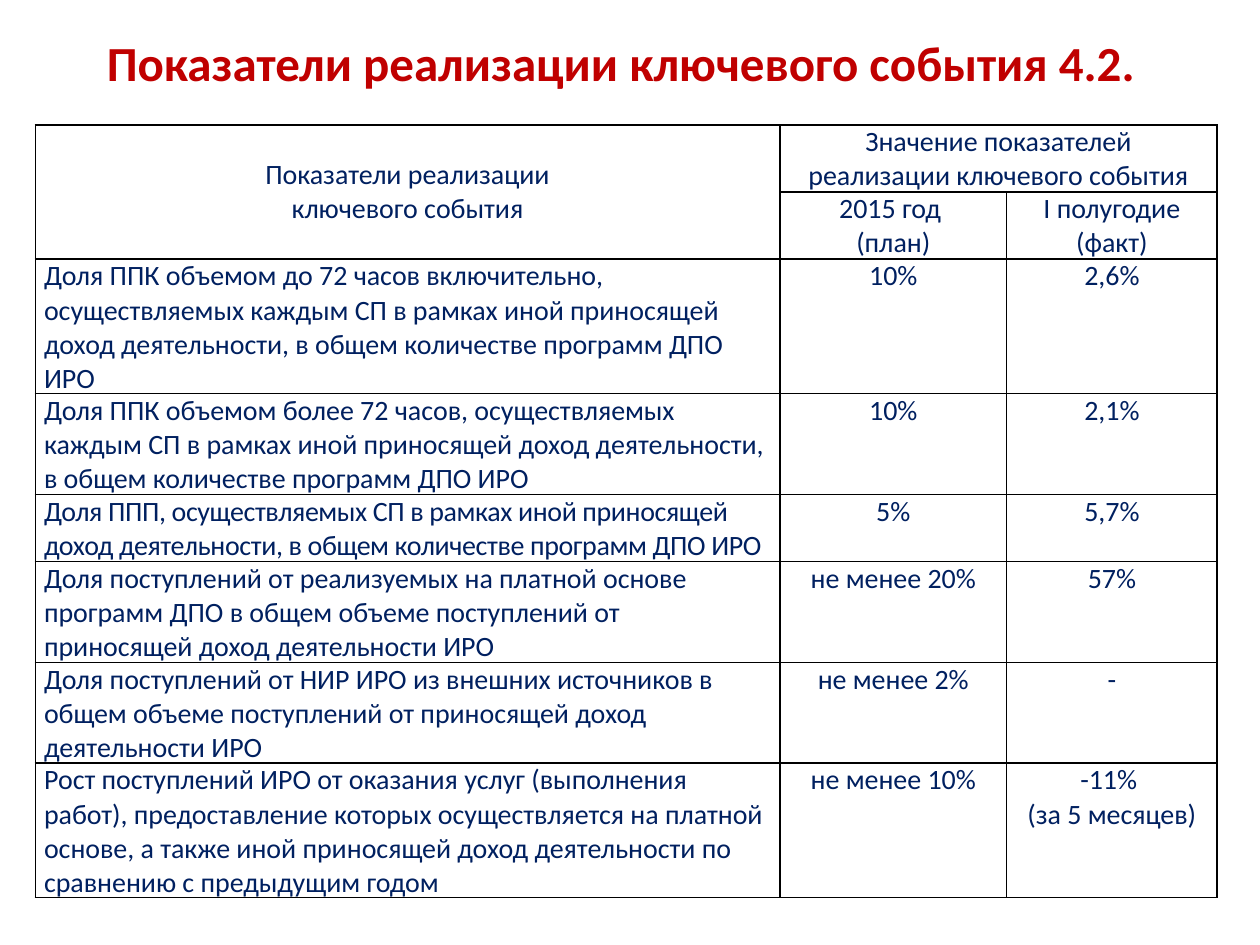
from lxml.etree import SubElement
from pptx import Presentation
from pptx.dml.color import RGBColor
from pptx.enum.text import MSO_ANCHOR as Anchor, MSO_AUTO_SIZE as AutoSize, PP_ALIGN as Align
from pptx.oxml.ns import qn
from pptx.util import Inches, Pt

# Content: "\n" starts a paragraph, "\v" breaks a line
TITLE = "Показатели реализации ключевого события 4.2."
HEADER = [
    ("Показатели реализации\vключевого события",
     "Значение показателей\vреализации ключевого события", ""),
    ("", "2015 год \n(план)", "I полугодие (факт)"),
]
INDICATORS = [
    ("Доля ППК объемом до 72\u00a0часов включительно, осуществляемых каждым СП в рамках "
     "иной приносящей доход деятельности, в общем количестве программ ДПО ИРО",
     "10%", "2,6%"),
    ("Доля ППК объемом более 72 часов, осуществляемых каждым СП в рамках иной "
     "приносящей доход деятельности, в общем количестве программ ДПО ИРО",
     "10%", "2,1%"),
    ("Доля ППП, осуществляемых СП в рамках иной приносящей доход деятельности, "
     "в общем количестве программ ДПО ИРО",
     "5%", "5,7%"),
    ("Доля поступлений от реализуемых на платной основе программ ДПО в общем объеме "
     "поступлений от приносящей доход деятельности ИРО",
     "не менее 20%", "57%"),
    ("Доля поступлений от НИР ИРО из внешних источников в общем объеме поступлений "
     "от приносящей доход деятельности ИРО",
     "не менее 2%", "-"),
    ("Рост поступлений ИРО от оказания услуг (выполнения работ), предоставление которых "
     "осуществляется на платной основе, а также иной приносящей доход деятельности "
     "по сравнению с предыдущим годом",
     "не менее 10%", "-11% \n(за 5 месяцев)"),
]
ROW_LINES = [2, 2, 4, 3, 2, 3, 3, 4]
COLUMN_WIDTHS = [5.91, 1.8, 1.67]
TABLE_HEIGHT = 6.13
CONDENSED_ROW = 4

THEME = {
    "font": "Calibri",
    "title": (28, "C00000", True),
    "body": (16, "002060", False),
    "border": ("000000", 1),
    "condensed": -0.2,
}


def style(paragraph, role, align):
    size, color, bold = THEME[role]
    font = paragraph.font
    font.name, font.size, font.bold = THEME["font"], Pt(size), bold
    font.color.rgb = RGBColor.from_string(color)
    paragraph.alignment = align


def add_borders(cell):
    color, width = THEME["border"]
    properties = cell._tc.get_or_add_tcPr()
    for position, side in enumerate(("a:lnL", "a:lnR", "a:lnT", "a:lnB")):
        line = properties.makeelement(qn(side), {"w": str(Pt(width))})
        fill = SubElement(line, qn("a:solidFill"))
        SubElement(fill, qn("a:srgbClr"), val=color)
        properties.insert(position, line)


def fill_cell(cell, text, align, anchor):
    cell.fill.background()
    cell.margin_left = cell.margin_right = Inches(0.07)
    cell.margin_top = cell.margin_bottom = 0
    cell.vertical_anchor = anchor
    cell.text = text
    for paragraph in cell.text_frame.paragraphs:
        style(paragraph, "body", align)
    add_borders(cell)


deck = Presentation()
deck.slide_width, deck.slide_height = Inches(10), Inches(7.5)
slide = deck.slides.add_slide(deck.slide_layouts[6])

# Title
title = slide.shapes.add_textbox(Inches(0.2), Inches(0.21), Inches(9.45), Inches(0.57)).text_frame
title.word_wrap = True
title.auto_size = AutoSize.SHAPE_TO_FIT_TEXT
title.text = TITLE
style(title.paragraphs[0], "title", Align.CENTER)

# Table grid: each row is as tall as its number of text lines
rows = HEADER + INDICATORS
table = slide.shapes.add_table(
    len(rows), len(COLUMN_WIDTHS), Inches(0.28), Inches(0.99),
    Inches(sum(COLUMN_WIDTHS)), Inches(TABLE_HEIGHT)).table
table.first_row = table.horz_banding = False
for column, width in zip(table.columns, COLUMN_WIDTHS):
    column.width = Inches(width)
for row, lines in zip(table.rows, ROW_LINES):
    row.height = Inches(TABLE_HEIGHT * lines / sum(ROW_LINES))

# Table text
for r, values in enumerate(rows):
    for c, text in enumerate(values):
        is_indicator = r >= len(HEADER) and c == 0
        fill_cell(table.cell(r, c), text,
                  Align.LEFT if is_indicator else Align.CENTER,
                  Anchor.MIDDLE if r == 0 else Anchor.TOP)
table.cell(0, 0).merge(table.cell(1, 0))
table.cell(0, 1).merge(table.cell(0, 2))

# Slightly tighter letters keep this indicator on two lines
for run in table.cell(CONDENSED_ROW, 0).text_frame.paragraphs[0].runs:
    run._r.get_or_add_rPr().set("spc", str(round(THEME["condensed"] * 100)))

deck.save("out.pptx")
